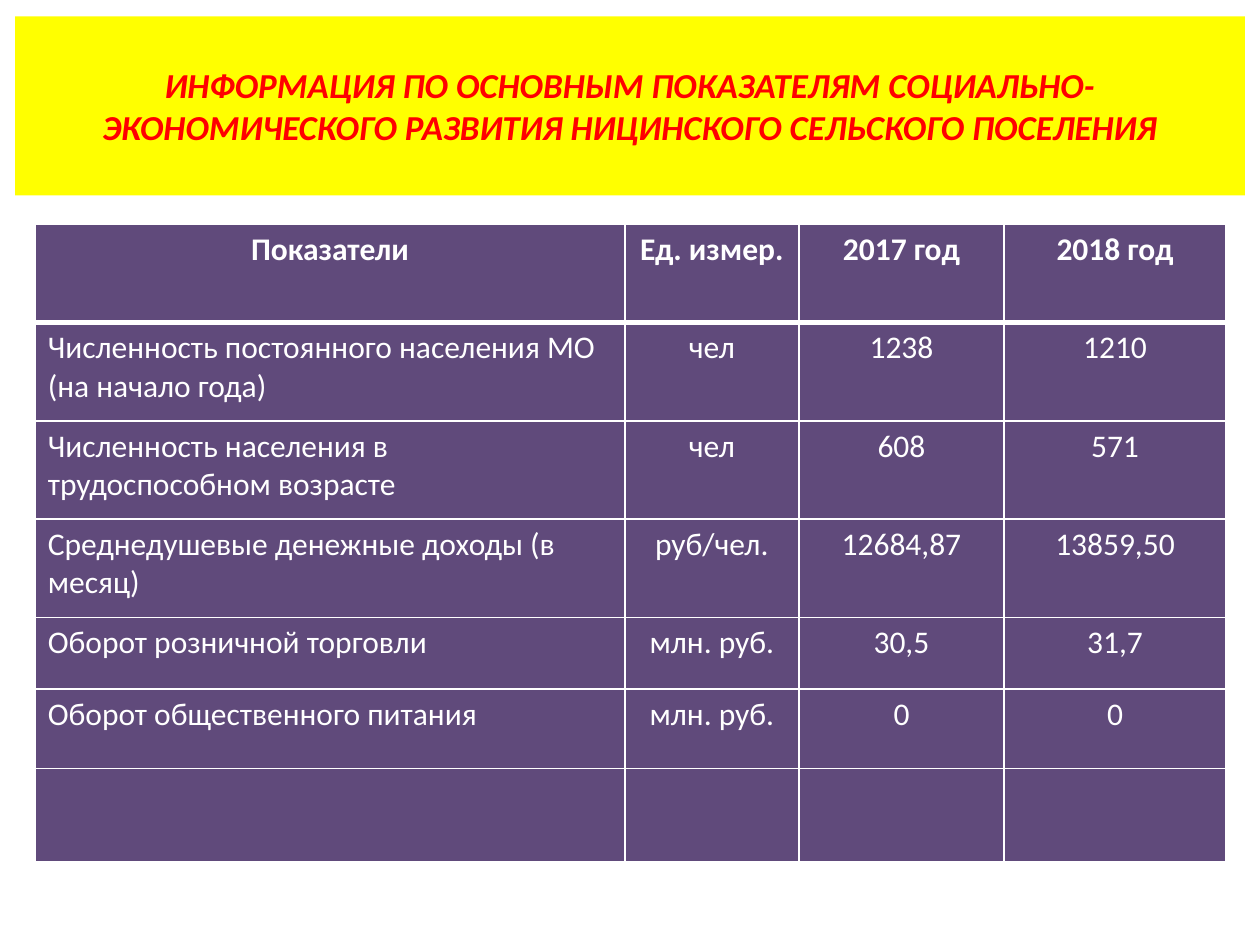
from dataclasses import dataclass

from lxml import etree
from pptx import Presentation
from pptx import util as u
from pptx.dml import color
from pptx.enum import text
from pptx.oxml import ns


@dataclass(frozen=True)
class Theme:
    font: str = "Calibri"
    band: str = "FFFF00"
    head: str = "FF0000"
    cell: str = "604A7B"
    ink: str = "FFFFFF"
    big: int = 20
    body: int = 18
    thin: int = 1
    thick: int = 3


THEME = Theme()
TITLE = ("ИНФОРМАЦИЯ ПО ОСНОВНЫМ ПОКАЗАТЕЛЯМ СОЦИАЛЬНО-ЭКОНОМИЧЕСКОГО "
         "РАЗВИТИЯ НИЦИНСКОГО СЕЛЬСКОГО ПОСЕЛЕНИЯ")
WIDTHS = (4.68, 1.38, 1.63, 1.76)
HEIGHTS = (0.78, 0.78, 0.78, 0.78, 0.57, 0.63, 0.74)
ROWS = (
    ("Показатели", "Ед. измер.", "2017 год", "2018 год"),
    ("Численность постоянного населения МО (на начало года)", "чел", "1238", "1210"),
    ("Численность населения в трудоспособном возрасте", "чел", "608", "571"),
    ("Среднедушевые денежные доходы (в месяц)", "руб/чел.", "12684,87", "13859,50"),
    ("Оборот розничной торговли", "млн. руб.", "30,5", "31,7"),
    ("Оборот общественного питания", "млн. руб.", "0", "0"),
    ("", "", "", ""),
)


def paint(fill, tone):
    fill.solid()
    fill.fore_color.rgb = color.RGBColor.from_string(tone)


def style(para, size, tone, bold, slant=False, center=True):
    font = para.font
    font.name, font.size = THEME.font, u.Pt(size)
    font.bold, font.italic = bold, slant
    font.color.rgb = color.RGBColor.from_string(tone)
    para.alignment = text.PP_ALIGN.CENTER if center else text.PP_ALIGN.LEFT


def border(cell, row):
    props = cell._tc.get_or_add_tcPr()
    top = THEME.thick if row == 1 else THEME.thin
    base = THEME.thick if row == 0 else THEME.thin
    sides = {"L": THEME.thin, "R": THEME.thin, "T": top, "B": base}
    for side, width in sides.items():
        line = etree.SubElement(props, ns.qn(f"a:ln{side}"), w=str(u.Pt(width)))
        fill = etree.SubElement(line, ns.qn("a:solidFill"))
        etree.SubElement(fill, ns.qn("a:srgbClr"), val=THEME.ink)


def add_title(slide):
    title = slide.shapes.title
    title.left, title.top = u.Inches(0.12), u.Inches(0.13)
    title.width, title.height = u.Inches(9.76), u.Inches(1.42)
    paint(title.fill, THEME.band)
    frame = title.text_frame
    frame.text = TITLE
    frame.word_wrap = True
    frame.auto_size = text.MSO_AUTO_SIZE.NONE
    frame.vertical_anchor = text.MSO_ANCHOR.MIDDLE
    style(frame.paragraphs[0], THEME.big, THEME.head, bold=True, slant=True)


def add_grid(slide):
    grid = slide.shapes.add_table(
        len(ROWS), len(WIDTHS), u.Inches(0.28), u.Inches(1.78),
        u.Inches(sum(WIDTHS)), u.Inches(sum(HEIGHTS))).table
    for col, width in zip(grid.columns, WIDTHS):
        col.width = u.Inches(width)
    for row, height in zip(grid.rows, HEIGHTS):
        row.height = u.Inches(height)
    for r, words in enumerate(ROWS):
        for c, word in enumerate(words):
            cell = grid.cell(r, c)
            cell.text = word
            border(cell, r)
            paint(cell.fill, THEME.cell)
            style(cell.text_frame.paragraphs[0], THEME.body, THEME.ink,
                  bold=r == 0, center=r == 0 or c > 0)


def main():
    deck = Presentation()
    deck.slide_width, deck.slide_height = u.Inches(10), u.Inches(7.5)
    slide = deck.slides.add_slide(deck.slide_layouts.get_by_name("Title Only"))
    add_grid(slide)
    add_title(slide)
    deck.save("out.pptx")


if __name__ == "__main__":
    main()
